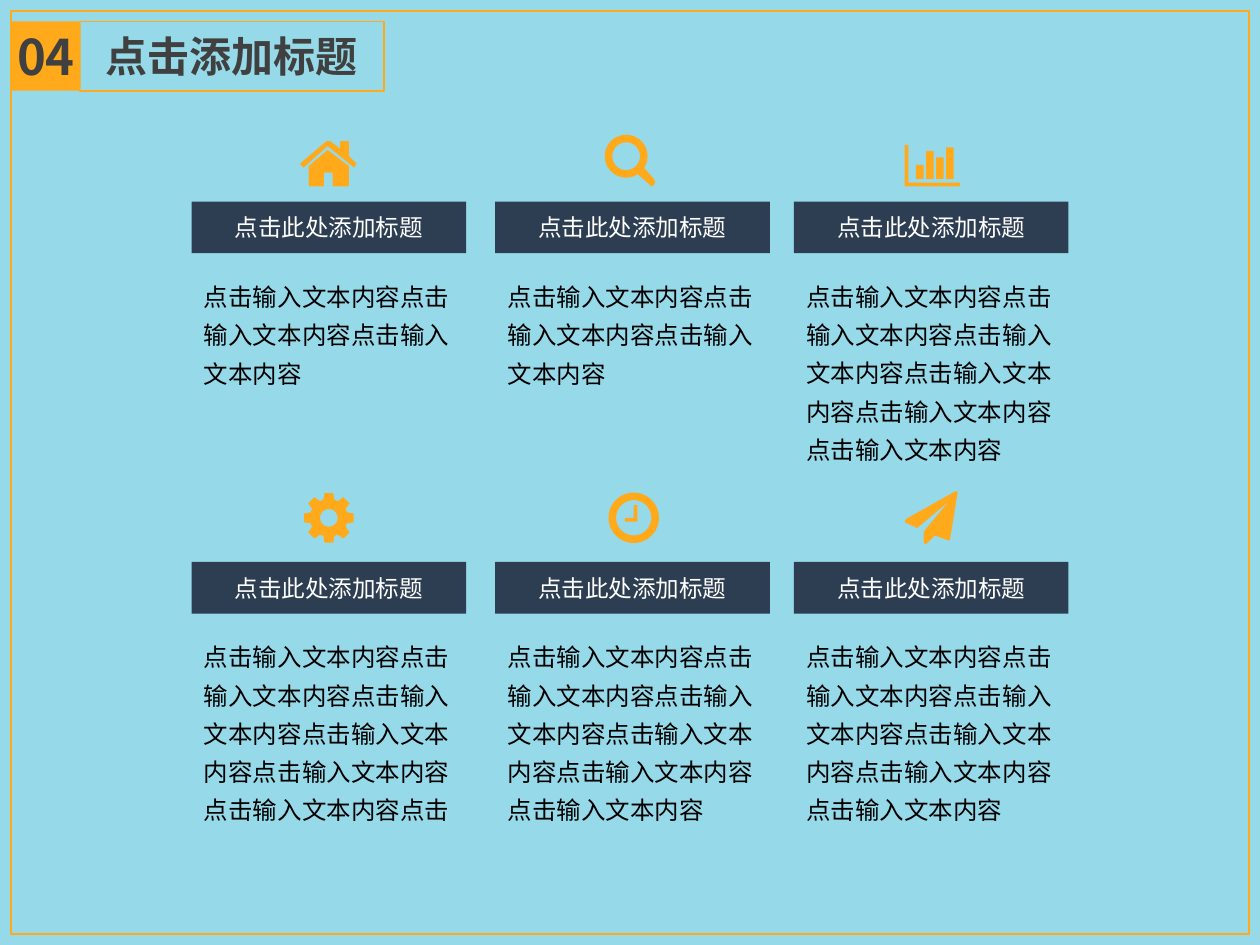
from math import cos, radians, sin

from lxml.etree import SubElement
from pptx import Presentation
from pptx.dml.color import RGBColor
from pptx.enum.shapes import MSO_SHAPE
from pptx.enum.text import MSO_ANCHOR, MSO_AUTO_SIZE, PP_ALIGN
from pptx.oxml.ns import qn
from pptx.util import Inches, Pt

RECT = MSO_SHAPE.RECTANGLE
MIDDLE, TOP = MSO_ANCHOR.MIDDLE, MSO_ANCHOR.TOP
CENTER, LEFT = PP_ALIGN.CENTER, PP_ALIGN.LEFT
FIXED, GROW = MSO_AUTO_SIZE.NONE, MSO_AUTO_SIZE.SHAPE_TO_FIT_TEXT

COLS = (1.52, 3.93, 6.3)
ROWS = (1.6, 4.46)
HEAD = "点击此处添加标题"
PHRASE = "点击输入文本内容"
BODIES = (PHRASE * 3, PHRASE * 3, PHRASE * 6,
          PHRASE * 6 + "点击", PHRASE * 6, PHRASE * 6)


def color(code):
    return RGBColor.from_string(code)


def polar(x, y, r, deg):
    return x + r * cos(radians(deg)), y + r * sin(radians(deg))


def arc(x, y, r, start=0, end=360):
    return [polar(x, y, r, a) for a in range(start, end + 1, 6)]


def box(x, y, x2, y2):
    return [(x, y), (x2, y), (x2, y2), (x, y2)]


def house():
    roof = [(2.81, 1.33), (2.6, 1.16), (2.41, 1.33), (2.38, 1.3),
            (2.58, 1.13), (2.6, 1.12), (2.62, 1.12), (2.7, 1.18),
            (2.7, 1.12), (2.77, 1.12), (2.77, 1.24), (2.83, 1.3)]
    walls = [(2.77, 1.32), (2.77, 1.47), (2.76, 1.48), (2.64, 1.48),
             (2.64, 1.37), (2.57, 1.37), (2.57, 1.48), (2.46, 1.48),
             (2.45, 1.47), (2.45, 1.32), (2.6, 1.19)]
    return [roof, walls]


def lens():
    grip = [(5.11, 1.33), (5.19, 1.42), (5.2, 1.44), (5.19, 1.47),
            (5.17, 1.48), (5.15, 1.46), (5.06, 1.38)]
    return [arc(4.97, 1.24, 0.17, 56, 392) + grip,
            arc(4.97, 1.24, 0.11)]


def chart():
    axes = [(7.18, 1.15), (7.21, 1.15), (7.21, 1.45), (7.62, 1.45),
            (7.62, 1.48), (7.18, 1.48)]
    tops = (1.31, 1.2, 1.25, 1.17)
    bars = [box(7.27 + i * 0.08, top, 7.33 + i * 0.08, 1.42)
            for i, top in enumerate(tops)]
    return [axes] + bars


def gear():
    tooth = ((-17, 0.15), (-10, 0.2), (10, 0.2), (17, 0.15))
    rim = [polar(2.61, 4.11, r, mid + turn)
           for mid in range(0, 360, 45) for turn, r in tooth]
    return [rim, arc(2.61, 4.11, 0.07)]


def clock():
    hands = [(5.03, 4.01), (5.06, 4.01), (5.06, 4.14), (4.96, 4.14),
             (4.96, 4.11), (5.03, 4.11)]
    return [arc(5.03, 4.11, 0.2), arc(5.03, 4.11, 0.14), hands]


def plane():
    return [[(7.6, 3.91), (7.54, 4.28), (7.53, 4.29), (7.42, 4.25),
             (7.36, 4.31), (7.34, 4.32), (7.33, 4.3), (7.33, 4.22),
             (7.53, 3.98), (7.28, 4.19), (7.19, 4.15), (7.18, 4.14),
             (7.19, 4.12), (7.58, 3.9), (7.6, 3.9)]]


class Deck:
    font = "Noto Sans CJK SC"
    sky, gold, navy = "96DAEA", "FFA91B", "2E3E52"
    gray, white, black = "404040", "FFFFFF", "000000"

    def __init__(self):
        self.prs = Presentation()
        self.prs.slide_width, self.prs.slide_height = Inches(10), Inches(7.5)
        self.slide = self.prs.slides.add_slide(self.prs.slide_layouts[5])
        self.shapes = self.slide.shapes
        back = self.slide.background.fill
        back.solid()
        back.fore_color.rgb = color(self.sky)

    def paint(self, shape, fill=None, line=None):
        if fill:
            shape.fill.solid()
            shape.fill.fore_color.rgb = color(fill)
        else:
            shape.fill.background()
        if line:
            shape.line.color.rgb = color(line)
            shape.line.width = Pt(1)
        else:
            shape.line.fill.background()

    def label(self, shape, text, size, ink, bold=False, align=CENTER,
              anchor=MIDDLE, fit=FIXED, space=1):
        frame = shape.text_frame
        frame.text = text
        frame.word_wrap = True
        frame.auto_size = fit
        frame.vertical_anchor = anchor
        para = frame.paragraphs[0]
        para.alignment = align
        para.line_spacing = space
        font = para.font
        font.size, font.bold, font.name = Pt(size), bold, self.font
        font.color.rgb = color(ink)
        props = para._p.get_or_add_pPr().find(qn("a:defRPr"))
        SubElement(props, qn("a:ea"), typeface=self.font)

    def title(self, text, *area):
        shape = self.shapes.title
        shape.left, shape.top, shape.width, shape.height = map(Inches, area)
        self.paint(shape, line=self.gold)
        self.label(shape, text, 24, self.gray, bold=True)

    def rect(self, *area, fill=None, line=None):
        shape = self.shapes.add_shape(RECT, *map(Inches, area))
        shape.shadow.inherit = False
        self.paint(shape, fill, line)
        return shape

    def badge(self, text, *area):
        shape = self.rect(*area, fill=self.gold)
        self.label(shape, text, 28, self.gray, bold=True)
        frame = shape.text_frame
        frame.margin_left = frame.margin_right = 0
        frame.margin_top = frame.margin_bottom = 0

    def icon(self, loops):
        pen = None
        for loop in loops:
            first, *rest = [(Inches(x), Inches(y)) for x, y in loop]
            if pen:
                pen.move_to(*first)
            else:
                pen = self.shapes.build_freeform(*first)
            pen.add_line_segments(rest, close=True)
        shape = pen.convert_to_shape()
        shape.shadow.inherit = False
        self.paint(shape, self.gold)

    def head(self, text, x, y):
        shape = self.rect(x, y, 2.18, 0.41, fill=self.navy)
        self.label(shape, text, 13.5, self.white)

    def body(self, text, x, y):
        high = 1.02 if len(text) <= 30 else 1.63
        area = map(Inches, (x, y, 2.17, high))
        self.label(self.shapes.add_textbox(*area), text, 14, self.black,
                   align=LEFT, anchor=TOP, fit=GROW, space=1.3)


def main():
    deck = Deck()
    deck.rect(0.09, 0.09, 9.82, 7.32, line=deck.gold)
    deck.badge("04", 0.09, 0.17, 0.55, 0.55)
    deck.title("点击添加标题", 0.63, 0.17, 2.42, 0.55)
    for draw in (house, lens, chart, gear, clock, plane):
        deck.icon(draw())
    cells = [(x, y) for y in ROWS for x in COLS]
    for (x, y), text in zip(cells, BODIES):
        deck.head(HEAD, x, y)
        deck.body(text, x, y + 0.52)
    deck.prs.save("out.pptx")


if __name__ == "__main__":
    main()
